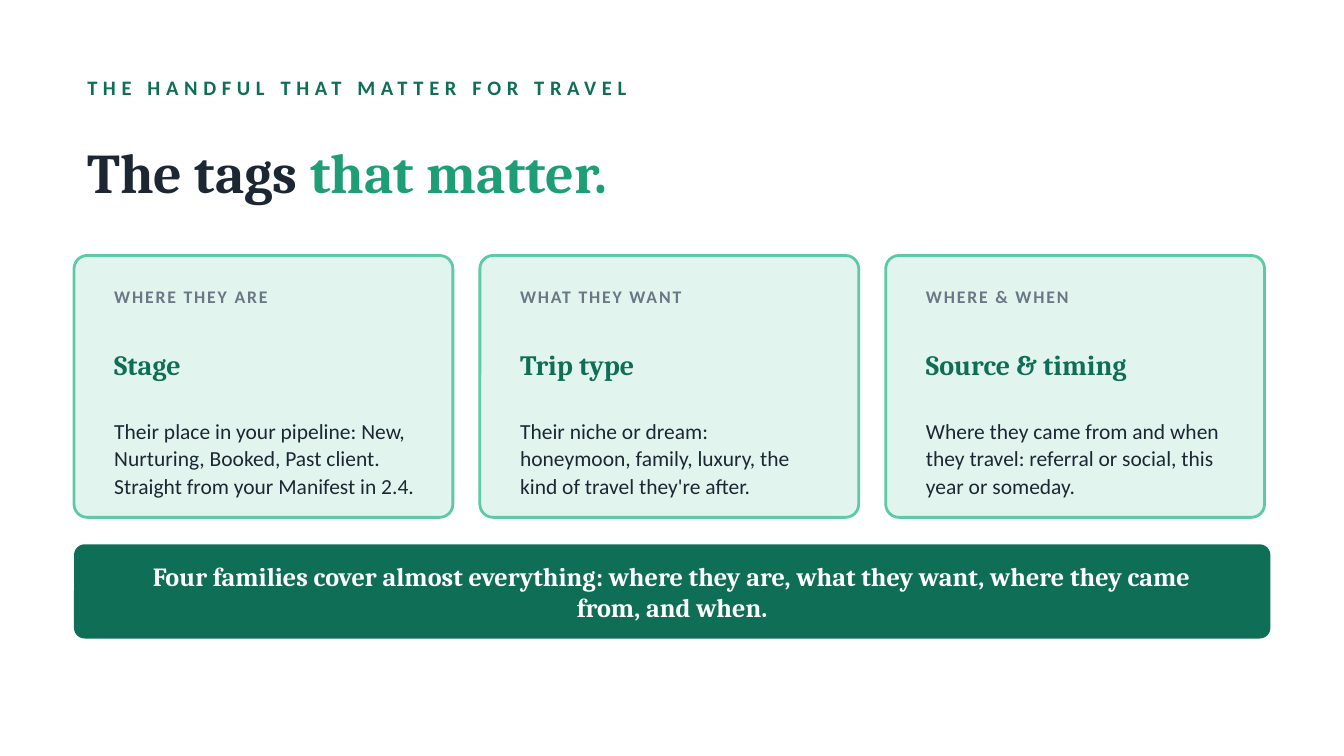
"""Build a slide that presents the travel tags in three cards and a summary banner."""
from dataclasses import dataclass

from pptx import Presentation
from pptx.dml.color import RGBColor
from pptx.enum.shapes import MSO_SHAPE
from pptx.enum.text import MSO_ANCHOR, PP_ALIGN
from pptx.slide import Slide
from pptx.util import Cm, Pt


@dataclass(frozen=True)
class Style:
    font: str
    size: float
    color: str
    bold: bool = True
    tracking: int = 0
    line_spacing: float | None = None
    align: PP_ALIGN = PP_ALIGN.LEFT


@dataclass(frozen=True)
class Theme:
    green: str = "0F6E56"
    mint: str = "E1F5EE"
    mint_edge: str = "5DCAA5"
    edge_points: float = 1.5
    eyebrow: Style = Style("Calibri", 11, "0F6E56", tracking=3)
    title: Style = Style("Cambria", 30, "1C2733")
    accent: Style = Style("Cambria", 30, "1D9E75")
    label: Style = Style("Calibri", 9.5, "6B7785", tracking=1)
    heading: Style = Style("Cambria", 15, "0F6E56")
    body: Style = Style("Calibri", 11.5, "1C2733", bold=False, line_spacing=1.08)
    banner: Style = Style("Cambria", 14, "FFFFFF", align=PP_ALIGN.CENTER)


@dataclass(frozen=True)
class Area:
    left: float
    top: float
    width: float
    height: float

    def lengths(self) -> tuple[Cm, Cm, Cm, Cm]:
        """Return the position and size as slide lengths."""
        return Cm(self.left), Cm(self.top), Cm(self.width), Cm(self.height)


@dataclass(frozen=True)
class Card:
    label: str
    heading: str
    body: str


THEME = Theme()
MARGIN = 1.4
CONTENT_WIDTH = 22.61
CARD_TOP = 4.83
CARD_WIDTH = 7.16
CARD_HEIGHT = 4.95
CARD_GAP = 0.51
CARD_INSET = 0.51
CARD_TEXT_WIDTH = 6.22
CORNER = 0.25
BANNER = Area(MARGIN, 10.29, CONTENT_WIDTH, 1.78)
BANNER_INSET = 0.64

CARDS = (
    Card("WHERE THEY ARE", "Stage",
         "Their place in your pipeline: New, Nurturing, Booked, Past client. "
         "Straight from your Manifest in 2.4."),
    Card("WHAT THEY WANT", "Trip type",
         "Their niche or dream: honeymoon, family, luxury, "
         "the kind of travel they're after."),
    Card("WHERE & WHEN", "Source & timing",
         "Where they came from and when they travel: "
         "referral or social, this year or someday."),
)


def add_text(page: Slide, area: Area, *pieces: tuple[str, Style]) -> None:
    """Add one vertically centred paragraph made of styled spans."""
    box = page.shapes.add_textbox(*area.lengths())
    frame = box.text_frame
    frame.word_wrap = True
    frame.vertical_anchor = MSO_ANCHOR.MIDDLE
    paragraph = frame.paragraphs[0]
    paragraph.alignment = pieces[0][1].align
    paragraph.line_spacing = pieces[0][1].line_spacing
    for text, style in pieces:
        span = paragraph.add_run()
        span.text = text
        formats = {"name": style.font, "size": Pt(style.size), "bold": style.bold}
        for attribute, value in formats.items():
            setattr(span.font, attribute, value)
        span.font.color.rgb = RGBColor.from_string(style.color)
        if style.tracking:
            span._r.get_or_add_rPr().set("spc", str(style.tracking * 100))


def add_panel(page: Slide, area: Area, fill: str, edge: str | None = None) -> None:
    """Add a rounded panel with an optional outline."""
    panel = page.shapes.add_shape(MSO_SHAPE.ROUNDED_RECTANGLE, *area.lengths())
    panel.shadow.inherit = False
    panel.adjustments[0] = CORNER / area.height if edge else 0.2 / area.height
    panel.fill.solid()
    panel.fill.fore_color.rgb = RGBColor.from_string(fill)
    if edge:
        panel.line.color.rgb = RGBColor.from_string(edge)
        panel.line.width = Pt(THEME.edge_points)
    else:
        panel.line.fill.background()


def add_card(page: Slide, card: Card, left: float) -> None:
    """Add a card panel with its label, heading and body."""
    add_panel(page, Area(left, CARD_TOP, CARD_WIDTH, CARD_HEIGHT),
              THEME.mint, THEME.mint_edge)
    rows = (
        (card.label, THEME.label, 5.23, 0.76),
        (card.heading, THEME.heading, 5.99, 1.78),
        (card.body, THEME.body, 7.82, 1.65),
    )
    for text, style, top, height in rows:
        area = Area(left + CARD_INSET, top, CARD_TEXT_WIDTH, height)
        add_text(page, area, (text, style))


def main() -> None:
    """Compose and save the deck."""
    deck = Presentation()
    deck.slide_width, deck.slide_height = Cm(25.4), Cm(14.29)
    page = deck.slides.add_slide(deck.slide_layouts[6])
    add_text(page, Area(MARGIN, 1.27, CONTENT_WIDTH, 0.76),
             ("THE HANDFUL THAT MATTER FOR TRAVEL", THEME.eyebrow))
    add_text(page, Area(MARGIN, 2.16, CONTENT_WIDTH, 2.16),
             ("The tags ", THEME.title), ("that matter.", THEME.accent))
    for index, card in enumerate(CARDS):
        add_card(page, card, MARGIN + index * (CARD_WIDTH + CARD_GAP))
    add_panel(page, BANNER, THEME.green)
    add_text(page, Area(BANNER.left + BANNER_INSET, BANNER.top,
                        BANNER.width - 2 * BANNER_INSET, BANNER.height),
             ("Four families cover almost everything: where they are, "
              "what they want, where they came from, and when.", THEME.banner))
    deck.save("out.pptx")


if __name__ == "__main__":
    main()
